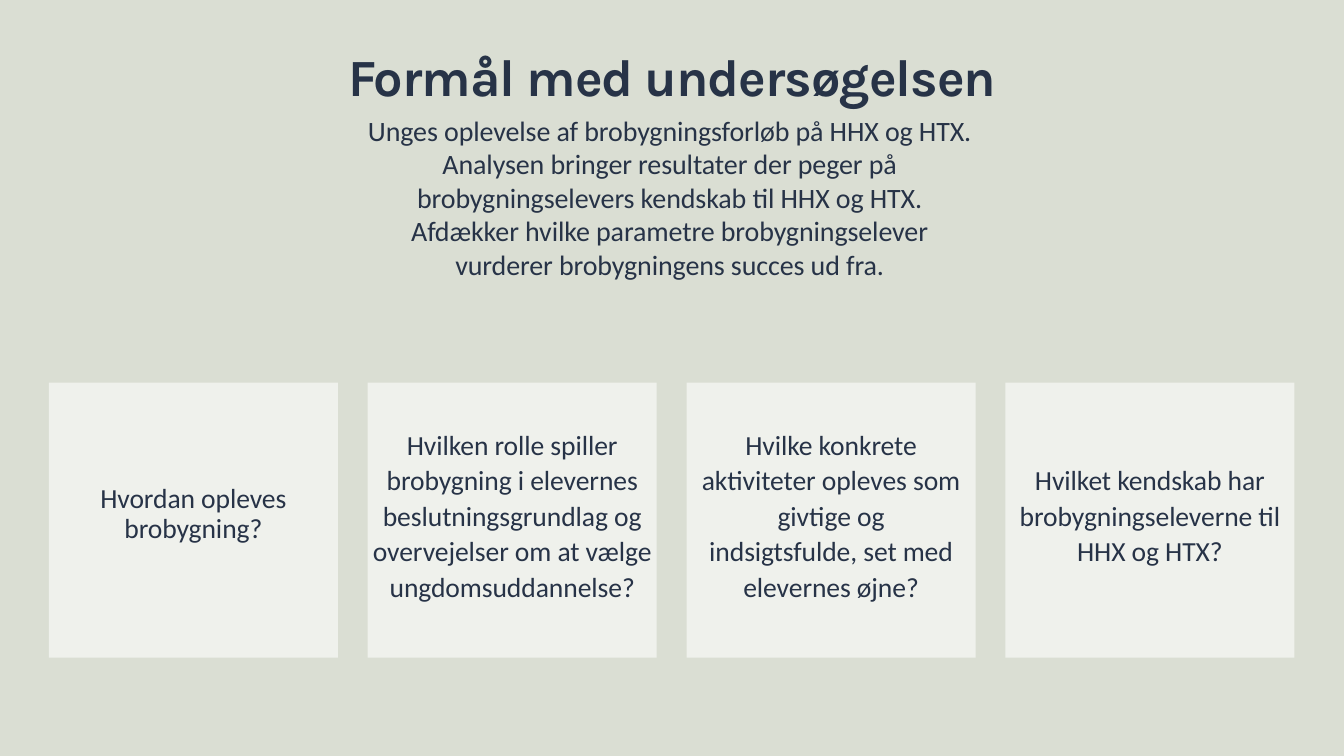
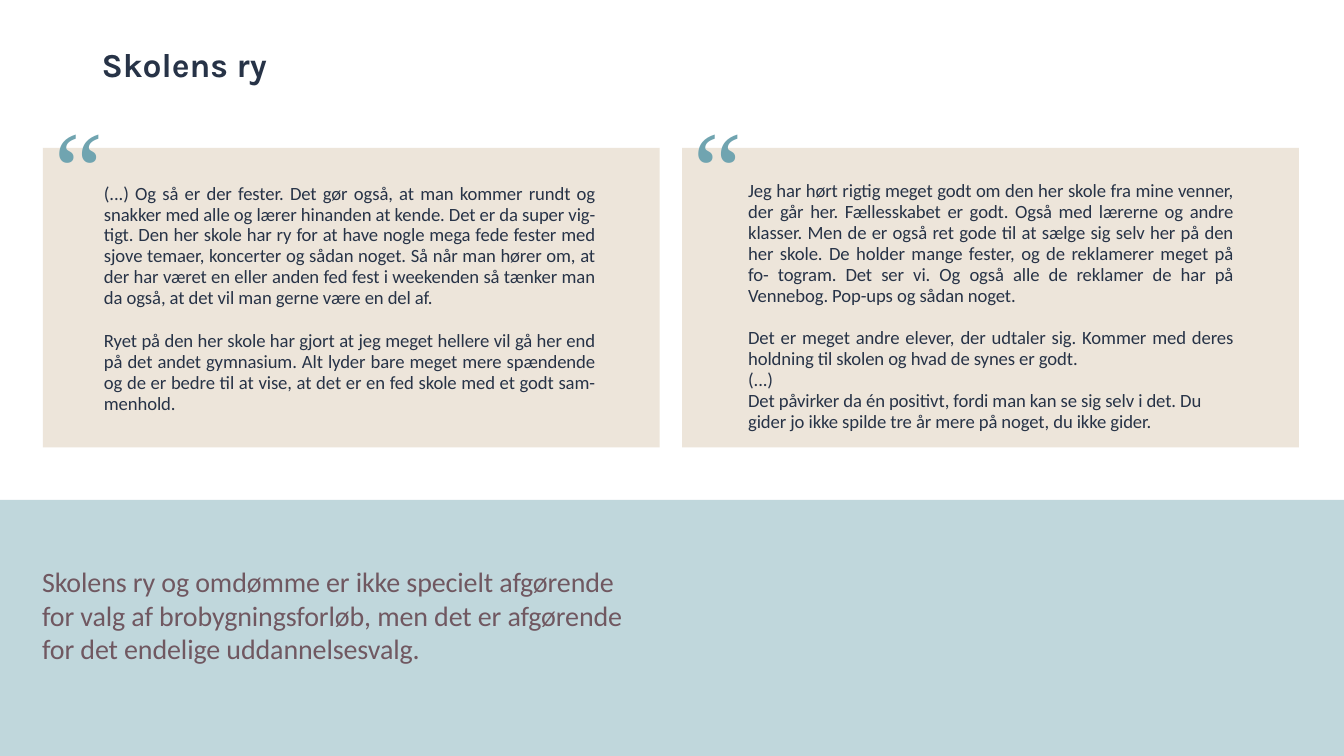
from pptx import Presentation
from pptx import util as u
from pptx.dml.color import RGBColor
from pptx.enum import shapes, text

WIDTH, HEIGHT = 55.85, 31.42
NAVY, PLUM, TEAL = "273347", "705861", "70A4B0"
SAGE, PALE, SAND, AQUA = "DADED3", "EFF1EC", "EDE5DA", "C0D7DC"
HEAD, BODY, MARK = "Karla", "Calibri", "Times New Roman"
LEFT, CENTER, JUSTIFY = text.PP_ALIGN.LEFT, text.PP_ALIGN.CENTER, text.PP_ALIGN.JUSTIFY

PURPOSE = (
    "Unges oplevelse af brobygningsforløb på HHX og HTX.\v"
    "Analysen bringer resultater der peger på\v"
    "brobygningselevers kendskab til HHX og HTX.\v"
    "Afdækker hvilke parametre brobygningselever\v"
    "vurderer brobygningens succes ud fra."
)
QUESTIONS = [
    ("Hvordan opleves\vbrobygning?", u.Pt(35.6)),
    ("Hvilken rolle spiller\vbrobygning i elevernes\vbeslutningsgrundlag og\v"
     "overvejelser om at vælge\vungdomsuddannelse?", 1.07),
    ("Hvilke konkrete\vaktiviteter opleves som\vgivtige og\v"
     "indsigtsfulde, set med\velevernes øjne?", 1.07),
    ("Hvilket kendskab har\vbrobygningseleverne til\vHHX og HTX?", 1.07),
]
PARTIES = [
    "(...) Og så er der fester. Det gør også, at man kommer rundt og snakker med alle "
    "og lærer hinanden at kende. Det er da super vig- tigt. Den her skole har ry for at "
    "have nogle mega fede fester med sjove temaer, koncerter og sådan noget. Så når man "
    "hører om, at der har været en eller anden fed fest i weekenden så tænker man da "
    "også, at det vil man gerne være en del af.",
]
REPUTATION = [
    "Ryet på den her skole har gjort at jeg meget hellere vil gå her end på det andet "
    "gymnasium. Alt lyder bare meget mere spændende og de er bedre til at vise, at det "
    "er en fed skole med et godt sam- menhold.",
]
FRIENDS = [
    "Jeg har hørt rigtig meget godt om den her skole fra mine venner, der går her. "
    "Fællesskabet er godt. Også med lærerne og andre klasser. Men de er også ret gode "
    "til at sælge sig selv her på den her skole. De holder mange fester, og de "
    "reklamerer meget på fo- togram. Det ser vi. Og også alle de reklamer de har på "
    "Vennebog. Pop-ups og sådan noget.",
]
STUDENTS = [
    "Det er meget andre elever, der udtaler sig. Kommer med deres holdning til skolen "
    "og hvad de synes er godt.",
    "(...)",
    "Det påvirker da én positivt, fordi man kan se sig selv i det. Du gider jo ikke "
    "spilde tre år mere på noget, du ikke gider.",
]
TAKEAWAY = (
    "Skolens ry og omdømme er ikke specielt afgørende\v"
    "for valg af brobygningsforløb, men det er afgørende\v"
    "for det endelige uddannelsesvalg."
)


def paint(fill, color):
    """Give a fill one solid colour."""
    fill.solid()
    fill.fore_color.rgb = RGBColor.from_string(color)


def write(sp, lines, size, color=NAVY, font=BODY, align=LEFT, bold=False,
          spacing=None, track=-0.1, anchor=text.MSO_ANCHOR.TOP):
    """Fill a shape with paragraphs in one style."""
    tf = sp.text_frame
    tf.text = "\n".join(lines)
    tf.word_wrap = True
    tf.auto_size = text.MSO_AUTO_SIZE.NONE
    tf.vertical_anchor = anchor
    tf.margin_left = tf.margin_top = tf.margin_right = tf.margin_bottom = 0
    for p in tf.paragraphs:
        p.alignment = align
        p.line_spacing = spacing
        for r in p.runs:
            r.font.name, r.font.size, r.font.bold = font, u.Pt(size), bold
            r.font.color.rgb = RGBColor.from_string(color)
            r._r.get_or_add_rPr().set("spc", str(round(track * 100)))
    return tf


def add_title(prs, title, box, size, **style):
    """Add a title-only slide and set its heading."""
    s = prs.slides.add_slide(prs.slide_layouts[5])
    sp = s.shapes.title
    sp.left, sp.top, sp.width, sp.height = map(u.Cm, box)
    write(sp, [title], size, font=HEAD, bold=True, **style)
    return s


def add_text(s, lines, box, size, **style):
    """Add a text box."""
    sp = s.shapes.add_textbox(*map(u.Cm, box))
    return write(sp, lines, size, **style)


def add_panel(s, box, color):
    """Add a plain filled rectangle."""
    sp = s.shapes.add_shape(shapes.MSO_SHAPE.RECTANGLE, *map(u.Cm, box))
    sp.shadow.inherit = False
    paint(sp.fill, color)
    sp.line.fill.background()
    return sp


def add_quote_card(s, left, text_left, text_top, width, first, second):
    """Add a sand card with a quotation mark and two quotes."""
    add_panel(s, (left, 6.15, 25.63, 12.45), SAND)
    for lines, top, height in ((first, text_top, 5.4), (second, text_top + 6.12, 4.4)):
        tf = add_text(s, lines, (text_left, top + 0.13, width, height), 22,
                      align=JUSTIFY, spacing=u.Pt(24.7))
        tf.paragraphs[-1].alignment = LEFT if len(lines) > 1 else JUSTIFY
    add_text(s, ["“"], (left + 0.48, 4.08, 1.93, 5.59), 130, color=TEAL, font=MARK)


def add_purpose_slide(prs):
    """Build the slide on the purpose of the survey."""
    s = add_title(prs, "Formål med undersøgelsen", (13.67, 1.83, 28.52, 2.6), 61.5,
                  align=CENTER, track=-1.3)
    paint(s.background.fill, SAGE)
    add_text(s, [PURPOSE], (13.57, 4.7, 28.52, 7.1), 33, align=CENTER, track=-0.15)
    for i, (question, spacing) in enumerate(QUESTIONS):
        sp = add_panel(s, (2.03 + i * 13.25, 15.9, 12.01, 11.43), PALE)
        tf = write(sp, [question], 32.5, align=CENTER, spacing=spacing,
                   anchor=text.MSO_ANCHOR.MIDDLE)
        tf.margin_bottom = u.Cm(0.5)


def add_reputation_slide(prs):
    """Build the slide on the school's reputation."""
    s = add_title(prs, "Skolens ry", (4.22, 1.83, 7.34, 1.75), 39.5, track=0)
    add_quote_card(s, 1.78, 4.32, 7.47, 20.42, PARTIES, REPUTATION)
    add_quote_card(s, 28.35, 31.09, 7.37, 20.17, FRIENDS, STUDENTS)
    add_panel(s, (0, 20.78, WIDTH, HEIGHT - 20.78), AQUA)
    add_text(s, [TAKEAWAY], (1.75, 23.47, 25.32, 4.27), 33, color=PLUM, track=-0.15)


def main():
    """Build and save the deck."""
    prs = Presentation()
    prs.slide_width, prs.slide_height = u.Cm(WIDTH), u.Cm(HEIGHT)
    add_purpose_slide(prs)
    add_reputation_slide(prs)
    prs.save("out.pptx")


if __name__ == "__main__":
    main()
